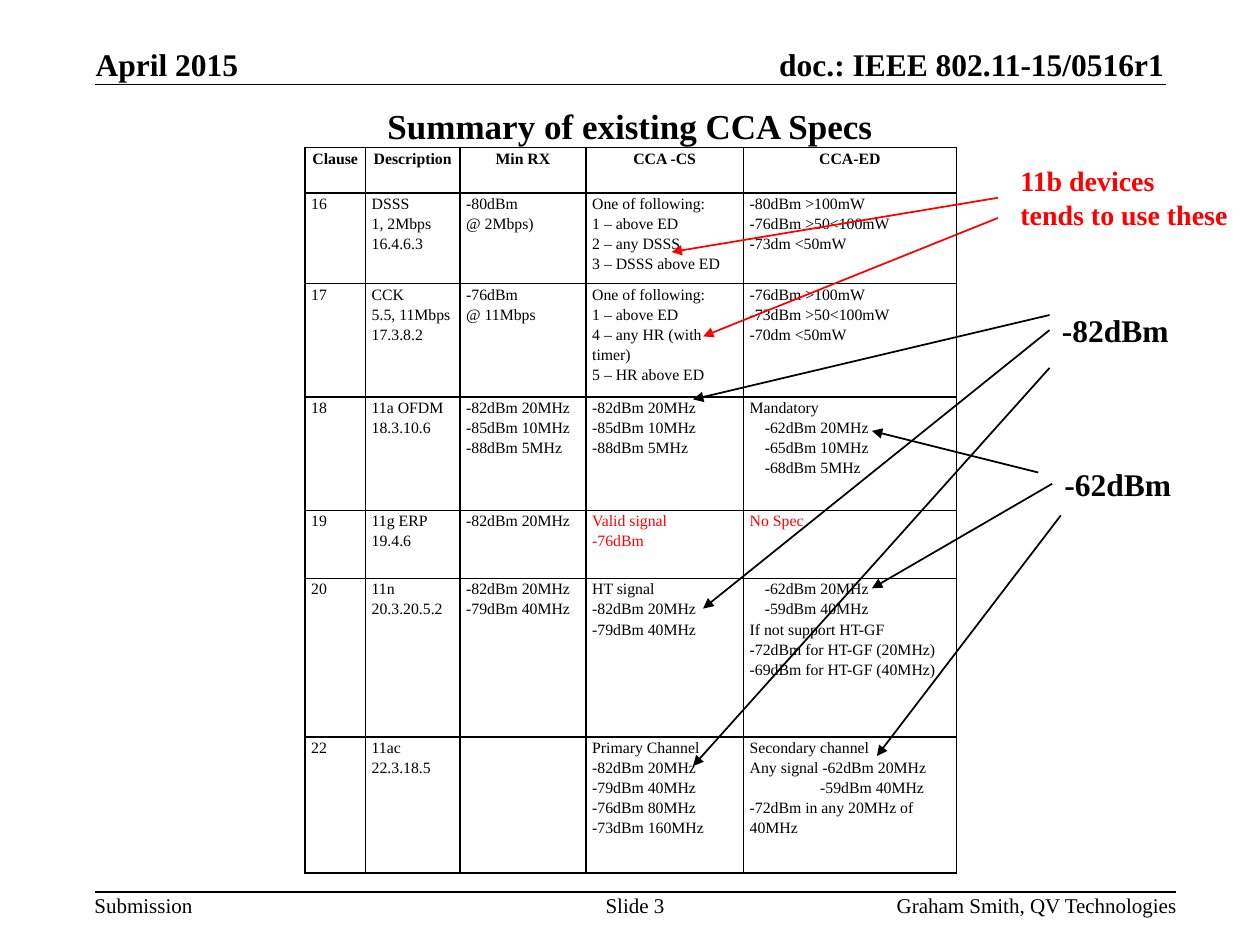
from dataclasses import dataclass

import pptx
import pptx.dml.color
import pptx.enum.shapes
import pptx.enum.text
import pptx.oxml
import pptx.oxml.ns
import pptx.util
from pptx.util import Inches

ALIGN = pptx.enum.text.PP_ALIGN
ANCHOR = pptx.enum.text.MSO_ANCHOR
AUTO_SIZE = pptx.enum.text.MSO_AUTO_SIZE


@dataclass(frozen=True)
class Theme:
    font: str = "Times New Roman"
    black: str = "000000"
    red: str = "FF0000"
    title_size: int = 20
    header_size: int = 18
    note_size: int = 16
    footer_size: int = 12
    table_size: int = 9
    line_width: int = 1


THEME = Theme()

COLUMN_WIDTHS = [0.48, 0.75, 1, 1.25, 1.69]
ROW_HEIGHTS = [0.36, 0.72, 0.9, 0.9, 0.54, 1.26, 1.08]
SPECS = [
    ["Clause", "Description", "Min RX", "CCA -CS", "CCA-ED"],
    ["16", "DSSS\n1, 2Mbps\n16.4.6.3", "-80dBm\n@ 2Mbps)",
     "One of following:\n1 – above ED\n2 – any DSSS\n3 – DSSS above ED",
     "-80dBm >100mW\n-76dBm >50<100mW\n-73dm <50mW"],
    ["17", "CCK\n5.5, 11Mbps\n17.3.8.2", "-76dBm\n@ 11Mbps",
     "One of following:\n1 – above ED\n4 – any HR (with timer)\n5 – HR above ED",
     "-76dBm >100mW\n-73dBm >50<100mW\n-70dm <50mW"],
    ["18", "11a OFDM\n18.3.10.6", "-82dBm 20MHz\n-85dBm 10MHz\n-88dBm 5MHz",
     "-82dBm 20MHz\n-85dBm 10MHz\n-88dBm 5MHz",
     "Mandatory\n-62dBm 20MHz\n-65dBm 10MHz\n-68dBm 5MHz"],
    ["19", "11g ERP\n19.4.6", "-82dBm 20MHz", "Valid signal\n-76dBm", "No Spec"],
    ["20", "11n\n20.3.20.5.2", "-82dBm 20MHz\n-79dBm 40MHz",
     "HT signal\n-82dBm 20MHz\n-79dBm 40MHz",
     "-62dBm 20MHz\n-59dBm 40MHz\nIf not support HT-GF\n"
     "-72dBm for HT-GF (20MHz)\n-69dBm for HT-GF (40MHz)"],
    ["22", "11ac\n22.3.18.5", "",
     "Primary Channel\n-82dBm 20MHz\n-79dBm 40MHz\n-76dBm 80MHz\n-73dBm 160MHz",
     "Secondary channel\nAny signal -62dBm 20MHz\n-59dBm 40MHz\n"
     "-72dBm in any 20MHz of 40MHz"],
]
RED_CELLS = {(4, 3), (4, 4)}
# Left indent of each line, by (row, column)
INDENTS = {
    (3, 4): [0, 0.12, 0.12, 0.12],
    (5, 4): [0.12, 0.12, 0, 0, 0],
    (6, 4): [0, 0, 0.56, 0],
}


def write_lines(text_frame, text, size, color, bold=False, align=ALIGN.LEFT):
    text_frame.text = text
    for paragraph in text_frame.paragraphs:
        paragraph.alignment = align
        font = paragraph.font
        font.name = THEME.font
        font.size = pptx.util.Pt(size)
        font.bold = bold
        font.color.rgb = pptx.dml.color.RGBColor.from_string(color)


def add_text(slide, text, box, size, color=THEME.black, bold=False,
             align=ALIGN.LEFT, anchor=ANCHOR.TOP, margins=(0, 0), wrap=False):
    shape = slide.shapes.add_textbox(*map(Inches, box))
    frame = shape.text_frame
    frame.word_wrap = wrap
    frame.auto_size = AUTO_SIZE.NONE if wrap else AUTO_SIZE.SHAPE_TO_FIT_TEXT
    frame.vertical_anchor = anchor
    frame.margin_left = frame.margin_right = Inches(margins[0])
    frame.margin_top = frame.margin_bottom = Inches(margins[1])
    write_lines(frame, text, size, color, bold, align)
    return shape


def add_label(slide, text, box, size, color=THEME.black):
    return add_text(slide, text, box, size, color, bold=True, margins=(0.1, 0.05))


def add_line(slide, start, end, color=THEME.black):
    line = slide.shapes.add_connector(
        pptx.enum.shapes.MSO_CONNECTOR.STRAIGHT, *map(Inches, (*start, *end)))
    line.line.color.rgb = pptx.dml.color.RGBColor.from_string(color)
    line.line.width = pptx.util.Pt(THEME.line_width)
    line._element.spPr.append(
        pptx.oxml.parse_xml(f"<a:effectLst {pptx.oxml.ns.nsdecls('a')}/>"))
    return line


def add_arrow(slide, start, end, color=THEME.black):
    arrow = add_line(slide, start, end, color)
    arrow.line._get_or_add_ln().append(pptx.oxml.parse_xml(
        f'<a:tailEnd {pptx.oxml.ns.nsdecls("a")} type="triangle"/>'))
    return arrow


def set_borders(cell):
    properties = cell._tc.get_or_add_tcPr()
    width = pptx.util.Pt(THEME.line_width)
    for position, side in enumerate(("lnL", "lnR", "lnT", "lnB")):
        properties.insert(position, pptx.oxml.parse_xml(
            f'<a:{side} {pptx.oxml.ns.nsdecls("a")} w="{width}"><a:solidFill>'
            f'<a:srgbClr val="{THEME.black}"/></a:solidFill></a:{side}>'))


def fill_cell(cell, text, row, column):
    cell.fill.background()
    cell.margin_left = cell.margin_right = Inches(0.05)
    cell.margin_top = cell.margin_bottom = 0
    is_header = row == 0
    write_lines(cell.text_frame, text, THEME.table_size,
                THEME.red if (row, column) in RED_CELLS else THEME.black,
                is_header, ALIGN.CENTER if is_header else ALIGN.LEFT)
    for paragraph in cell.text_frame.paragraphs:
        paragraph.line_spacing = 1.15
    indents = INDENTS.get((row, column), [])
    for paragraph, indent in zip(cell.text_frame.paragraphs, indents):
        paragraph._p.get_or_add_pPr().set("marL", str(Inches(indent)))
    set_borders(cell)


def add_spec_table(slide):
    table = slide.shapes.add_table(
        len(ROW_HEIGHTS), len(COLUMN_WIDTHS), Inches(2.42), Inches(1.17),
        Inches(sum(COLUMN_WIDTHS)), Inches(sum(ROW_HEIGHTS))).table
    table.first_row = table.horz_banding = False
    for column, width in zip(table.columns, COLUMN_WIDTHS):
        column.width = Inches(width)
    for row, height in zip(table.rows, ROW_HEIGHTS):
        row.height = Inches(height)
    for row, texts in enumerate(SPECS):
        for column, text in enumerate(texts):
            fill_cell(table.cell(row, column), text, row, column)


def add_header_and_footer(slide):
    add_text(slide, "April 2015", (0.76, 0.36, 1.3, 0.3), THEME.header_size,
             bold=True, anchor=ANCHOR.BOTTOM, wrap=True)
    add_text(slide, "doc.: IEEE 802.11-15/0516r1", (5.44, 0.36, 3.8, 0.3),
             THEME.header_size, bold=True, align=ALIGN.RIGHT,
             anchor=ANCHOR.BOTTOM, wrap=True)
    add_line(slide, (0.75, 0.67), (9.25, 0.67))
    add_line(slide, (0.75, 7.08), (9.33, 7.08))
    for text, left, width, align in (
            ("Submission", 0.75, 1, ALIGN.LEFT),
            ("Slide 3", 4.64, 0.8, ALIGN.CENTER),
            ("Graham Smith, QV Technologies", 6.74, 2.6, ALIGN.RIGHT)):
        add_text(slide, text, (left, 7.08, width, 0.2), THEME.footer_size,
                 align=align, wrap=True)


def add_level_notes(slide):
    """Add each level label; the middle arrow of its three starts at its left side."""
    for text, box, arrows in (
            ("-82dBm", (8.33, 2.42, 1.06, 0.4),
             [((8.33, 2.5), (5.5, 3.17)), ((8.33, 2.62), (5.58, 4.83)),
              ((8.33, 2.92), (5.5, 6.08))]),
            ("-62dBm", (8.35, 3.64, 1.06, 0.4),
             [((8.24, 3.75), (6.92, 3.42)), ((8.35, 3.84), (6.92, 4.67)),
              ((8.42, 4.09), (6.96, 6))])):
        label = add_label(slide, text, box, THEME.header_size)
        _, middle, _ = [add_arrow(slide, start, end) for start, end in arrows]
        middle.begin_connect(label, 1)


def add_device_note(slide):
    add_label(slide, "11b devices\ntends to use these", (8, 1.25, 1.88, 0.64),
              THEME.note_size, THEME.red)
    add_arrow(slide, (7.92, 1.57), (5.33, 2), THEME.red)
    add_arrow(slide, (7.92, 1.73), (5.58, 2.67), THEME.red)


def main():
    presentation = pptx.Presentation()
    presentation.slide_width = Inches(10)
    presentation.slide_height = Inches(7.5)
    slide = presentation.slides.add_slide(presentation.slide_layouts[6])
    add_header_and_footer(slide)
    add_text(slide, "Summary of existing CCA Specs", (0.75, 0.75, 8.5, 0.5),
             THEME.title_size, bold=True, align=ALIGN.CENTER,
             anchor=ANCHOR.MIDDLE, margins=(0.1, 0.05), wrap=True)
    add_spec_table(slide)
    add_level_notes(slide)
    add_device_note(slide)
    presentation.save("out.pptx")


if __name__ == "__main__":
    main()
